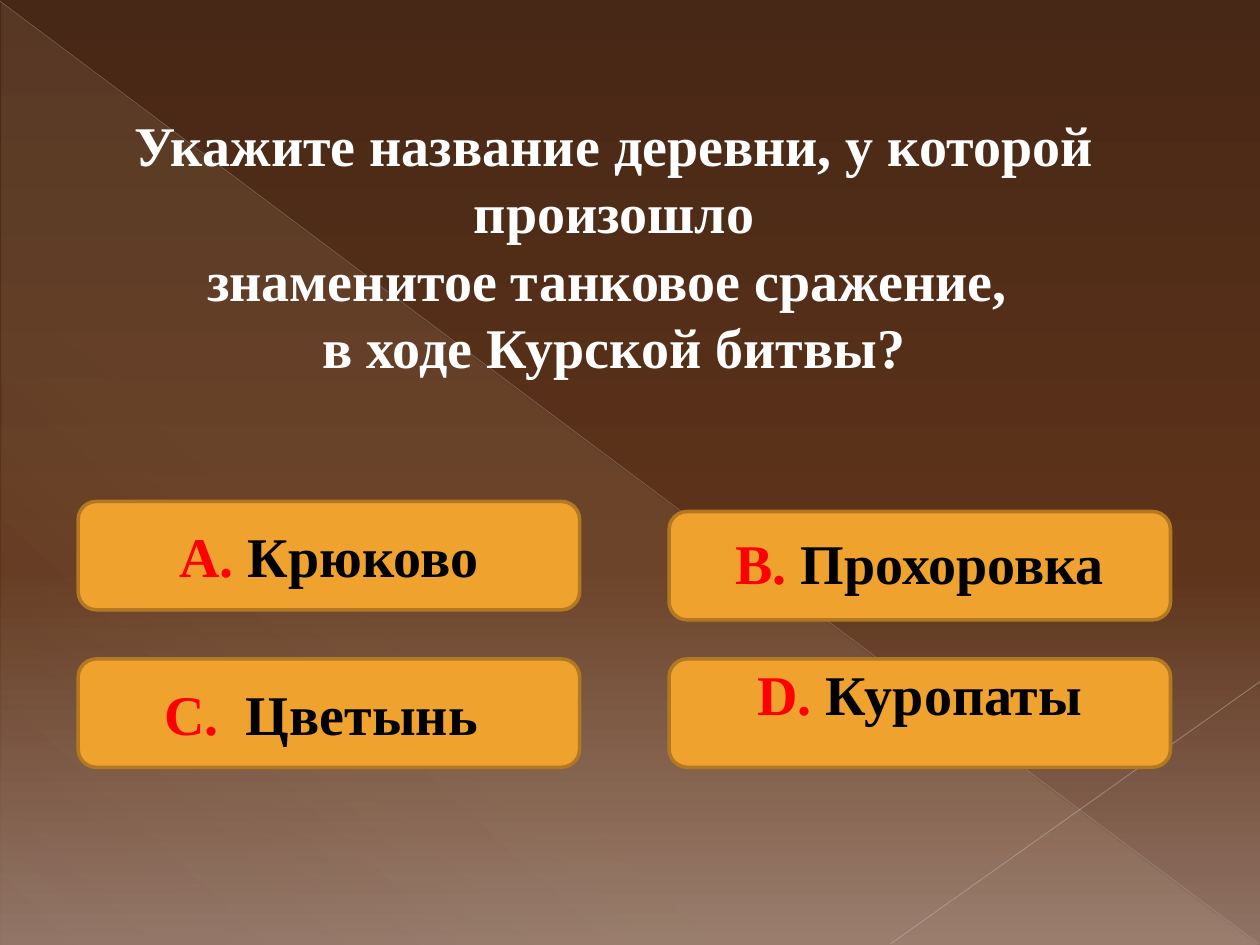
from dataclasses import dataclass

from lxml import etree
from pptx import Presentation
from pptx.dml.color import RGBColor
from pptx.enum.shapes import MSO_CONNECTOR, MSO_SHAPE
from pptx.enum.text import MSO_ANCHOR, PP_ALIGN
from pptx.oxml.ns import qn
from pptx.util import Inches, Pt

LINE = MSO_CONNECTOR.STRAIGHT
WEDGE = MSO_SHAPE.RIGHT_TRIANGLE
PILL = MSO_SHAPE.FLOWCHART_ALTERNATE_PROCESS
MIDDLE = MSO_ANCHOR.MIDDLE
LEFT, CENTER = PP_ALIGN.LEFT, PP_ALIGN.CENTER

HUES = {
    "top": "472715", "mid": "5E341B", "low": "907365",
    "glow": "FBEEC9", "long": "BCB7B4", "short": "C4BFBD",
    "gold": "F0A22E", "rim": "B27822",
    "red": "FF0000", "black": "000000", "white": "FFFFFF",
}
FONT = {"name": "Times New Roman", "size": Pt(32), "bold": True}


@dataclass
class Ray:
    start: tuple[float, float]
    end: tuple[float, float]
    hue: str
    width: float
    alpha: int


@dataclass
class Answer:
    label: str
    name: str
    left: float
    top: float
    pad: float = 0.05   # bottom inset
    indent: float = 0.1
    tab: float = 0      # tab stop between label and name


RAYS = [
    Ray((0, 0.01), (9.99, 7.49), "long", 0.39, 35),
    Ray((10, 5.41), (7.07, 7.49), "short", 0.47, 45),
]
COLS, LOW = (0.62, 5.31), 5.23
ANSWERS = [
    Answer("А. ", "Крюково", COLS[0], 3.98),
    Answer("С.\t", "Цветынь", COLS[0], LOW, indent=0.64, tab=0.65),
    Answer("В. ", "Прохоровка", COLS[1], 4.06, pad=0.11),
    Answer("D. ", "Куропаты", COLS[1], LOW, pad=0.37),
]
QUESTION = [
    "Укажите название деревни, у которой",
    "произошло",
    "знаменитое танковое сражение, ",
    "в ходе Курской битвы?",
]


def color(hue: str) -> RGBColor:
    return RGBColor.from_string(HUES[hue])


def fade(node, alpha: int) -> None:
    etree.SubElement(node, qn("a:alpha"), val=str(alpha * 1000))


def ramp(node, stops: list[tuple[int, str, int]], angle: int) -> None:
    """Fill a gradient element with stops of place, hue and opacity."""
    group = node.find(qn("a:gsLst"))
    for old in list(group):
        group.remove(old)
    for place, hue, alpha in stops:
        stop = etree.SubElement(group, qn("a:gs"), pos=str(place * 1000))
        tint = etree.SubElement(stop, qn("a:srgbClr"), val=HUES[hue])
        if alpha < 100:
            fade(tint, alpha)
    node.find(qn("a:lin")).set("ang", str(angle * 60000))


def write(para, text: str, hue: str) -> None:
    run = para.add_run()
    run.text = text
    for key, value in FONT.items():
        setattr(run.font, key, value)
    run.font.color.rgb = color(hue)


def draw_ray(slide, ray: Ray) -> None:
    ends = [Inches(n) for n in ray.start + ray.end]
    line = slide.shapes.add_connector(LINE, *ends)
    line.line.width = Pt(ray.width)
    line.line.color.rgb = color(ray.hue)
    props = line.element.spPr
    fade(props.find(".//" + qn("a:srgbClr")), ray.alpha)
    etree.SubElement(props, qn("a:effectLst"))


def draw_answer(slide, item: Answer) -> None:
    box = slide.shapes.add_shape(PILL, Inches(item.left), Inches(item.top),
                                 Inches(3.98), Inches(0.86))
    box.shadow.inherit = False
    box.fill.solid()
    box.fill.fore_color.rgb = color("gold")
    box.line.color.rgb = color("rim")
    box.line.width = Pt(2)
    frame = box.text_frame
    look = {"vertical_anchor": MIDDLE, "word_wrap": True,
            "margin_left": Inches(item.indent),
            "margin_bottom": Inches(item.pad)}
    for key, value in look.items():
        setattr(frame, key, value)
    para = frame.paragraphs[0]
    para.alignment = LEFT if item.tab else CENTER
    if item.tab:
        tabs = etree.SubElement(para._p.get_or_add_pPr(), qn("a:tabLst"))
        etree.SubElement(tabs, qn("a:tab"), pos=str(Inches(item.tab)), algn="l")
    write(para, item.label, "red")
    write(para, item.name, "black")


def draw_question(slide) -> None:
    box = slide.shapes.add_textbox(Inches(0.93), Inches(0.83),
                                   Inches(7.89), Inches(2.23))
    frame = box.text_frame
    frame.word_wrap = False
    frame.vertical_anchor = MIDDLE
    for i, text in enumerate(QUESTION):
        para = frame.add_paragraph() if i else frame.paragraphs[0]
        para.alignment = CENTER
        write(para, text, "white")


def draw_scene(slide) -> None:
    # Background gradient
    slide.background.fill.gradient()
    ramp(slide.element.find(".//" + qn("a:gradFill")),
         [(0, "top", 100), (60, "mid", 100), (100, "low", 100)], 90)
    # Pale wedge
    wedge = slide.shapes.add_shape(WEDGE, Inches(0.01), Inches(0.02),
                                   Inches(9.98), Inches(7.48))
    wedge.shadow.inherit = False
    wedge.line.fill.background()
    wedge.fill.gradient()
    ramp(wedge.element.spPr.find(qn("a:gradFill")),
         [(0, "glow", 10), (70, "glow", 8), (100, "glow", 1)], 133)
    # Thin rays
    for ray in RAYS:
        draw_ray(slide, ray)


def main() -> None:
    deck = Presentation()
    deck.slide_width, deck.slide_height = Inches(10), Inches(7.5)
    slide = deck.slides.add_slide(deck.slide_layouts[6])
    draw_scene(slide)
    for item in ANSWERS:
        draw_answer(slide, item)
    draw_question(slide)
    deck.save("out.pptx")


if __name__ == "__main__":
    main()
